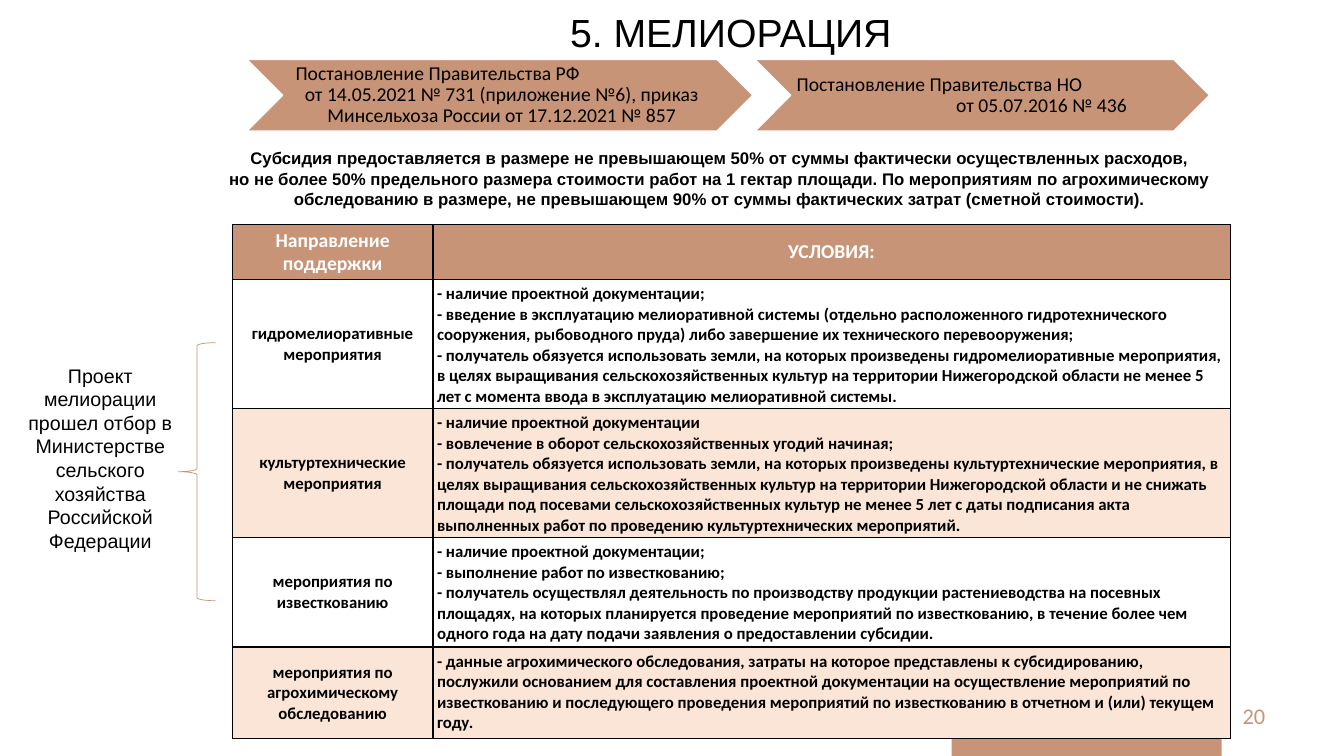
import pptx
import pptx.dml.color
import pptx.enum.shapes
import pptx.enum.text
import pptx.oxml
import pptx.oxml.ns
import pptx.util

Pt = pptx.util.Pt
RGBColor = pptx.dml.color.RGBColor
SHAPE = pptx.enum.shapes.MSO_SHAPE
ALIGN = pptx.enum.text.PP_ALIGN
ANCHOR = pptx.enum.text.MSO_ANCHOR

COPPER = RGBColor(0xC7, 0x94, 0x78)
PEACH = RGBColor(0xFB, 0xE5, 0xD6)
WHITE = RGBColor(0xFF, 0xFF, 0xFF)
BLACK = RGBColor(0, 0, 0)

HEADINGS = ["Направление поддержки", "УСЛОВИЯ:"]
MEASURES = [
    ("гидромелиоративные мероприятия", [
        "- наличие проектной документации;",
        "- введение в эксплуатацию мелиоративной системы (отдельно расположенного гидротехнического "
        "сооружения, рыбоводного пруда) либо завершение их технического перевооружения;",
        "- получатель обязуется использовать земли, на которых произведены гидромелиоративные "
        "мероприятия, в целях выращивания сельскохозяйственных культур на территории Нижегородской "
        "области не менее 5 лет с момента ввода в эксплуатацию мелиоративной системы."]),
    ("культуртехнические мероприятия", [
        "- наличие проектной документации",
        "- вовлечение в оборот сельскохозяйственных угодий начиная;",
        "- получатель обязуется использовать земли, на которых произведены культуртехнические "
        "мероприятия, в целях выращивания сельскохозяйственных культур на территории Нижегородской "
        "области и не снижать площади под посевами сельскохозяйственных культур не менее 5 лет с даты "
        "подписания акта выполненных работ по проведению культуртехнических мероприятий."]),
    ("мероприятия по известкованию", [
        "- наличие проектной документации;",
        "- выполнение работ по известкованию;",
        "- получатель осуществлял деятельность по производству продукции растениеводства на посевных "
        "площадях, на которых планируется проведение мероприятий по известкованию, в течение более чем "
        "одного года на дату подачи заявления о предоставлении субсидии."]),
    ("мероприятия по агрохимическому обследованию", [
        "- данные агрохимического обследования, затраты на которое представлены к субсидированию, "
        "послужили основанием для составления проектной документации на осуществление мероприятий по "
        "известкованию и последующего проведения мероприятий по известкованию в отчетном и (или) "
        "текущем году."]),
]
COLUMN_WIDTHS = [143.3, 569.5]
ROW_HEIGHTS = [39.5, 92, 92, 78, 65.5]

SUBSIDY = [
    "Субсидия предоставляется в размере не превышающем 50% от суммы фактически осуществленных расходов,",
    "но не более 50% предельного размера стоимости работ на 1 гектар площади. По мероприятиям по "
    "агрохимическому обследованию в размере, не превышающем 90% от суммы фактических затрат "
    "(сметной стоимости).",
]
# Each decree line: text, alignment, left indent
DECREES = [
    ((176.4, 42.5, 361.4, 51.1), [
        ("Постановление Правительства РФ", ALIGN.LEFT, 5),
        ("от 14.05.2021 № 731 (приложение №6), приказ Минсельхоза России от 17.12.2021 № 857",
         ALIGN.CENTER, 0)]),
    ((539.3, 42.5, 324.7, 51.1), [
        ("Постановление Правительства НО", ALIGN.LEFT, 0),
        ("от 05.07.2016 № 436", ALIGN.LEFT, 114)]),
]


def points(box):
    return [Pt(value) for value in box]


def set_margins(holder, left, top, right, bottom):
    holder.margin_left, holder.margin_top = Pt(left), Pt(top)
    holder.margin_right, holder.margin_bottom = Pt(right), Pt(bottom)


def write(frame, lines, size, font="Calibri", color=BLACK, bold=False, align=ALIGN.CENTER):
    """Fill a text frame with one paragraph per line and return the paragraphs."""
    frame.word_wrap = True
    for index, line in enumerate(lines):
        para = frame.paragraphs[0] if index == 0 else frame.add_paragraph()
        para.alignment = align
        span = para.add_run()
        span.text = line
        span.font.name, span.font.size = font, Pt(size)
        span.font.bold, span.font.color.rgb = bold, color
    return frame.paragraphs


def add_text(page, box, lines, size, margins=(7.2, 3.6, 7.2, 3.6), **style):
    frame = page.shapes.add_textbox(*points(box)).text_frame
    set_margins(frame, *margins)
    write(frame, lines, size, **style)
    return frame


def add_block(page, kind, box, fill=None, line=None, width=1):
    block = page.shapes.add_shape(kind, *points(box))
    block.shadow.inherit = False
    if fill is None:
        block.fill.background()
    else:
        block.fill.solid()
        block.fill.fore_color.rgb = fill
    if line is None:
        block.line.fill.background()
    else:
        block.line.color.rgb, block.line.width = line, Pt(width)
    return block


def add_title(page, box, text):
    title = page.shapes.title
    title.left, title.top, title.width, title.height = points(box)
    title.text_frame.vertical_anchor = ANCHOR.TOP
    write(title.text_frame, [text], 28, font="Arial")


def add_decree(page, box, lines):
    chevron = add_block(page, SHAPE.CHEVRON, box, COPPER, WHITE)
    frame = chevron.text_frame
    set_margins(frame, 4.2, 1.4, 1.4, 1.4)
    frame.vertical_anchor = ANCHOR.MIDDLE
    paras = write(frame, [text for text, _, _ in lines], 14)
    for para, (_, align, indent) in zip(paras, lines):
        para.alignment, para.line_spacing = align, 0.9
        para._p.get_or_add_pPr().set("marL", str(Pt(indent)))


def add_borders(cell):
    properties = cell._tc.get_or_add_tcPr()
    for side in ("lnL", "lnR", "lnT", "lnB"):
        properties.append(pptx.oxml.parse_xml(
            f'<a:{side} {pptx.oxml.ns.nsdecls("a")} w="{Pt(1)}"><a:solidFill>'
            f'<a:srgbClr val="{BLACK}"/></a:solidFill></a:{side}>'))


def fill_cell(cell, lines, fill, anchor=ANCHOR.MIDDLE, **style):
    add_borders(cell)
    cell.fill.solid()
    cell.fill.fore_color.rgb = fill
    set_margins(cell, 2.9, 2.9, 2.9, 2.9)
    cell.vertical_anchor = anchor
    write(cell.text_frame, lines, bold=True, **style)


def add_conditions(page, left, top):
    box = (left, top, sum(COLUMN_WIDTHS), sum(ROW_HEIGHTS))
    table = page.shapes.add_table(len(ROW_HEIGHTS), len(COLUMN_WIDTHS), *points(box)).table
    for column, width in zip(table.columns, COLUMN_WIDTHS):
        column.width = Pt(width)
    for row, height in zip(table.rows, ROW_HEIGHTS):
        row.height = Pt(height)
    for index, heading in enumerate(HEADINGS):
        fill_cell(table.cell(0, index), [heading], COPPER, size=14, color=WHITE)
    for index, (measure, conditions) in enumerate(MEASURES, start=1):
        fill = WHITE if index % 2 else PEACH
        fill_cell(table.cell(index, 0), [measure], fill, size=12)
        fill_cell(table.cell(index, 1), conditions, fill, ANCHOR.TOP, size=12, align=ALIGN.LEFT)


def add_selection_note(page, box, text):
    """Place the note at the left of the box and the brace at its right."""
    left, top, width, height = box
    add_text(page, (left, top + 11.5, 143.3, 143.3), [text], 14, font="Arial")
    add_block(page, SHAPE.LEFT_BRACE, (left + width - 26.6, top, 26.6, height),
              line=COPPER, width=0.5)


def build_melioration(deck):
    page = deck.slides.add_slide(deck.slide_layouts[5])
    # Footer bar and page number
    add_block(page, SHAPE.RECTANGLE, (679.7, 472.3, 193, 67.7), COPPER)
    number = add_text(page, (694.8, 496.8, 216, 28.8), ["20"], 16, color=COPPER, align=ALIGN.RIGHT)
    number.vertical_anchor = ANCHOR.MIDDLE
    # Title and legal basis
    add_title(page, (221, 2.2, 602, 41), "5. МЕЛИОРАЦИЯ")
    for box, lines in DECREES:
        add_decree(page, box, lines)
    # Subsidy size
    add_text(page, (153.4, 105.8, 721.4, 44), SUBSIDY, 12, (0, 0, 0, 0), font="Arial", bold=True)
    # Conditions table and the note beside it
    add_conditions(page, 166, 160.3)
    add_selection_note(page, (0, 244.8, 154, 184.3),
                       "Проект мелиорации прошел отбор в Министерстве сельского хозяйства "
                       "Российской Федерации")


def main():
    deck = pptx.Presentation()
    deck.slide_width, deck.slide_height = Pt(960), Pt(540)
    build_melioration(deck)
    deck.save("out.pptx")


if __name__ == "__main__":
    main()
